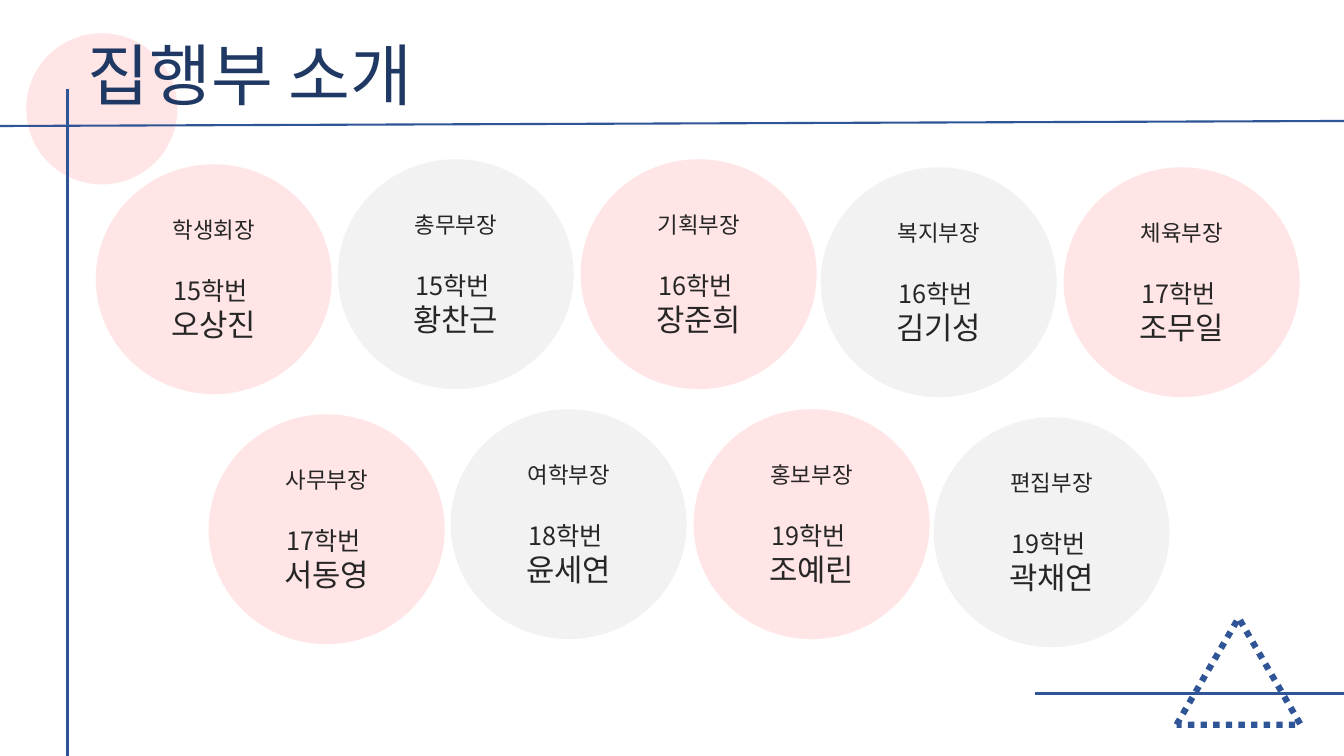
"""Build the slide that introduces the student council officers."""
from itertools import cycle
from lxml.etree import SubElement
from pptx import Presentation
from pptx.dml.color import RGBColor
from pptx.enum.dml import MSO_LINE as Dash
from pptx.enum.shapes import MSO_CONNECTOR as Conn, MSO_SHAPE as Shape
from pptx.enum.text import MSO_ANCHOR as Anchor, PP_ALIGN as Align
from pptx.oxml.ns import qn
from pptx.util import Inches, Pt

FONT = "Noto Sans CJK KR"
PINK, GRAY, BLUE, NAVY, INK = "FFE5E5", "F2F2F2", "2F5597", "203864", "262626"
WIDE, HIGH = 13.33, 7.5


def write(para, text, size, color, align):
    """Put one styled run in a paragraph."""
    para.alignment = align
    run = para.add_run()
    run.text = text
    for key, val in {"name": FONT, "size": Pt(size), "bold": False}.items():
        setattr(run.font, key, val)
    run.font.color.rgb = RGBColor.from_string(color)
    SubElement(run.font._element, qn("a:ea"), typeface=FONT)


def draw(kind, box, fill=None):
    """Add a flat shape with no outline."""
    shape = slide.shapes.add_shape(kind, *map(Inches, box))
    shape.shadow.inherit = False
    shape.line.fill.background()
    if fill:
        shape.fill.solid()
        shape.fill.fore_color.rgb = RGBColor.from_string(fill)
    else:
        shape.fill.background()
    return shape


deck = Presentation()
deck.slide_width, deck.slide_height = Inches(WIDE), Inches(HIGH)
slide = deck.slides.add_slide(deck.slide_layouts[5])

draw(Shape.OVAL, (0.26, 0.33, 1.5, 1.5), PINK)
for ends in [(0.67, 0.88, 0.67, HIGH), (WIDE, 6.88, 10.27, 6.88), (WIDE, 1.2, 0, 1.25)]:
    rule = slide.shapes.add_connector(Conn.STRAIGHT, *map(Inches, ends))
    rule.line.width = Pt(1.5)
    rule.line.color.rgb = RGBColor.from_string(BLUE)
    SubElement(rule._element.spPr, qn("a:effectLst"))

peak = draw(Shape.ISOSCELES_TRIANGLE, (11.67, 6.13, 1.23, 1.06))
peak.line.color.rgb = RGBColor.from_string(BLUE)
for key, val in {"width": Pt(4.5), "dash_style": Dash.ROUND_DOT}.items():
    setattr(peak.line, key, val)

title = slide.shapes.title
spot = {"left": 0.77, "top": 0.28, "width": 4.83, "height": 0.91}
for key, val in spot.items():
    setattr(title, key, Inches(val))
title.text_frame.vertical_anchor = Anchor.MIDDLE
write(title.text_frame.paragraphs[0], "집행부 소개", 48, NAVY, Align.LEFT)
slide.shapes._spTree.append(title._element)

lefts = [0.95, 3.35, 5.76, 8.14, 10.55]
tops = [1.63, 1.58, 1.58, 1.66, 1.66]
rows = [
    [("학생회장", 15, "오상진"), ("총무부장", 15, "황찬근"), ("기획부장", 16, "장준희"),
     ("복지부장", 16, "김기성"), ("체육부장", 17, "조무일")],
    [("사무부장", 17, "서동영"), ("여학부장", 18, "윤세연"), ("홍보부장", 19, "조예린"),
     ("편집부장", 19, "곽채연")],
]
for row, team in enumerate(rows):
    for left, top, fill, (role, year, name) in zip(lefts, tops, cycle([PINK, GRAY]), team):
        disc = draw(Shape.OVAL, (left + 1.12 * row, top + 2.48 * row, 2.34, 2.28), fill)
        frame = disc.text_frame
        frame.vertical_anchor = Anchor.MIDDLE
        write(frame.paragraphs[0], role, 16, INK, Align.CENTER)
        frame.paragraphs[0].space_after = Pt(23)
        for text, size in [(f"{year}학번 ", 18), (name, 22)]:
            write(frame.add_paragraph(), text, size, INK, Align.CENTER)

deck.save("out.pptx")
